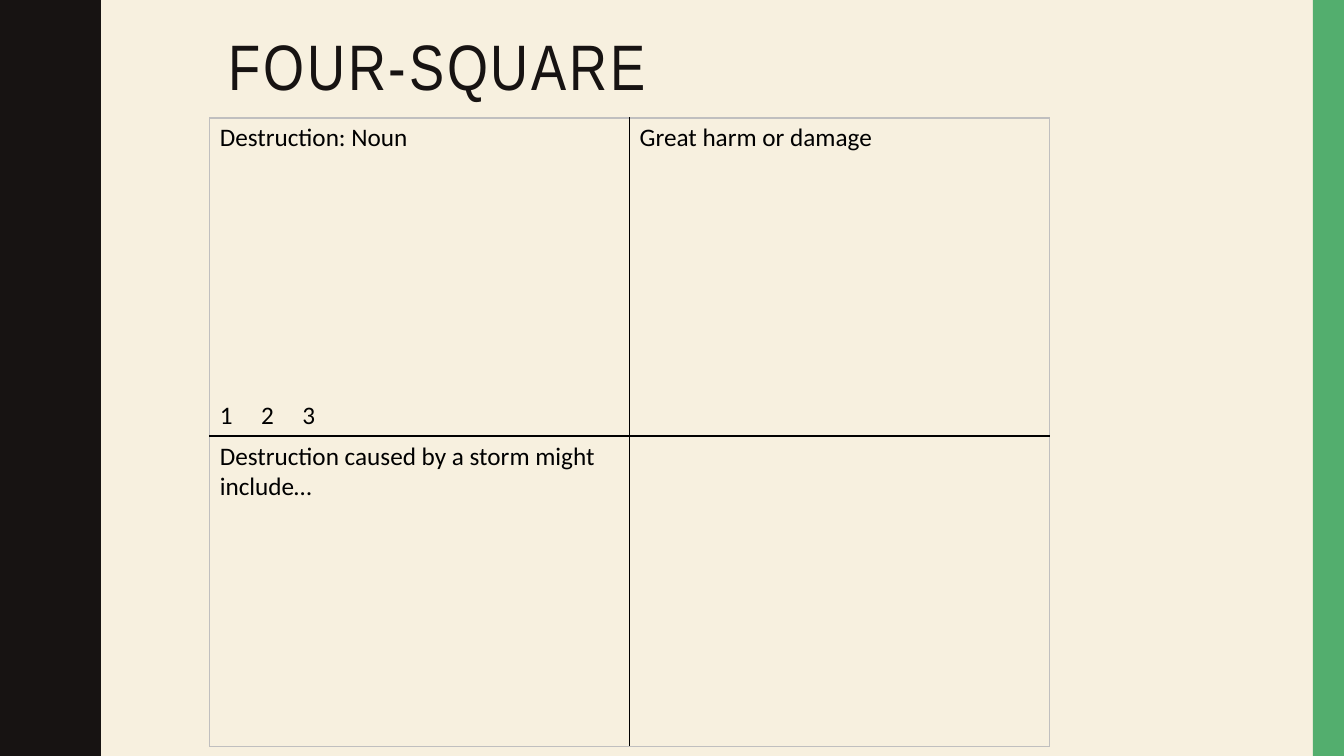
from lxml import etree
from pptx import Presentation
from pptx.dml.color import RGBColor
from pptx.enum.shapes import MSO_SHAPE as Shape
from pptx.enum.text import MSO_ANCHOR as Anchor, PP_ALIGN as Align
from pptx.oxml.ns import qn
from pptx.util import Inches, Pt

COLORS = {
    "cream": "F7F0DF",
    "ink": "171312",
    "green": "53AE6E",
    "black": "000000",
    "frame": "C0BFBF",
}
SLIDE_W, SLIDE_H = 13.33, 7.5
WAVE_LENGTH = 1.5
# Trough to crest of the wavy edge: distance down, distance across
HALF_WAVE = [
    (0, 0.78), (0.07, 0.78), (0.14, 0.79), (0.2, 0.8), (0.25, 0.81),
    (0.29, 0.83), (0.33, 0.85), (0.38, 0.87), (0.42, 0.89), (0.46, 0.91),
    (0.5, 0.93), (0.55, 0.95), (0.61, 0.96), (0.68, 0.97), (0.75, 0.97),
]
WORD = "Destruction: Noun"
RATING = "1\t2\t3"
MEANING = "Great harm or damage"
PROMPT = "Destruction caused by a storm might include…"


def rgb(name):
    return RGBColor.from_string(COLORS[name])


def write_text(paragraph, text, size=18, font="Calibri", color="black",
               before=0, line_spacing=None, tracking=None):
    paragraph.alignment = Align.LEFT
    paragraph.space_before = Pt(before)
    if line_spacing:
        paragraph.line_spacing = line_spacing
    run = paragraph.add_run()
    run.text = text
    run.font.size = Pt(size)
    run.font.name = font
    run.font.color.rgb = rgb(color)
    if tracking:
        run.font._element.set("spc", str(tracking * 100))


def paint(shape, color):
    shape.shadow.inherit = False
    shape.fill.solid()
    shape.fill.fore_color.rgb = rgb(color)
    shape.line.fill.background()


def add_wavy_edge(slide, height):
    wave = HALF_WAVE + [(WAVE_LENGTH - y, x) for y, x in HALF_WAVE[-2:0:-1]]
    edge = [(x, n * WAVE_LENGTH + y)
            for n in range(round(height / WAVE_LENGTH)) for y, x in wave]
    edge += [(HALF_WAVE[0][1], height), (0, height)]
    builder = slide.shapes.build_freeform(0, 0, scale=Inches(1))
    builder.add_line_segments(edge, close=True)
    paint(builder.convert_to_shape(), "ink")


def add_side_band(slide, left, top, width, height):
    band = slide.shapes.add_shape(Shape.RECTANGLE, Inches(left), Inches(top),
                                  Inches(width), Inches(height))
    paint(band, "green")


def add_title(slide, left, top, width, height):
    title = slide.shapes.title
    title.left, title.top = Inches(left), Inches(top)
    title.width, title.height = Inches(width), Inches(height)
    frame = title.text_frame
    frame.word_wrap = True
    frame.vertical_anchor = Anchor.MIDDLE
    write_text(frame.paragraphs[0], "FOUR-SQUARE", size=45.9,
               font="Arial Narrow", color="ink", line_spacing=0.9, tracking=2)


def set_border(cell, side, color):
    line = etree.SubElement(cell._tc.get_or_add_tcPr(), qn(f"a:ln{side}"),
                            w=str(Pt(1)))
    fill = etree.SubElement(line, qn("a:solidFill"))
    etree.SubElement(fill, qn("a:srgbClr"), val=COLORS[color])


def add_tab_stops(paragraph, step, count):
    tabs = etree.SubElement(paragraph._p.get_or_add_pPr(), qn("a:tabLst"))
    for n in range(1, count + 1):
        etree.SubElement(tabs, qn("a:tab"), pos=str(Inches(n * step)), algn="l")


def add_four_square(slide, left, top, width, row_heights):
    table = slide.shapes.add_table(2, 2, Inches(left), Inches(top),
                                   Inches(width),
                                   Inches(sum(row_heights))).table
    table.first_row = table.horz_banding = False
    for row, height in zip(table.rows, row_heights):
        row.height = Inches(height)
    for r, texts in enumerate([(WORD, MEANING), (PROMPT, "")]):
        for c, text in enumerate(texts):
            cell = table.cell(r, c)
            inner = {"R" if c == 0 else "L", "B" if r == 0 else "T"}
            for side in "LRTB":
                set_border(cell, side, "black" if side in inner else "frame")
            cell.fill.background()
            if text:
                write_text(cell.text_frame.paragraphs[0], text)
    rating = table.cell(0, 0).text_frame.add_paragraph()
    write_text(rating, RATING, before=176)
    add_tab_stops(rating, step=0.41, count=2)


def main():
    prs = Presentation()
    prs.slide_width, prs.slide_height = Inches(SLIDE_W), Inches(SLIDE_H)
    slide = prs.slides.add_slide(prs.slide_layouts[5])
    slide.background.fill.solid()
    slide.background.fill.fore_color.rgb = rgb("cream")
    add_wavy_edge(slide, SLIDE_H)
    add_side_band(slide, 13.02, 0, 0.31, SLIDE_H)
    add_title(slide, 2.17, 0.3, 8.33, 0.78)
    add_four_square(slide, 2.08, 1.17, 8.33, row_heights=(3.15, 3.08))
    prs.save("out.pptx")


if __name__ == "__main__":
    main()
